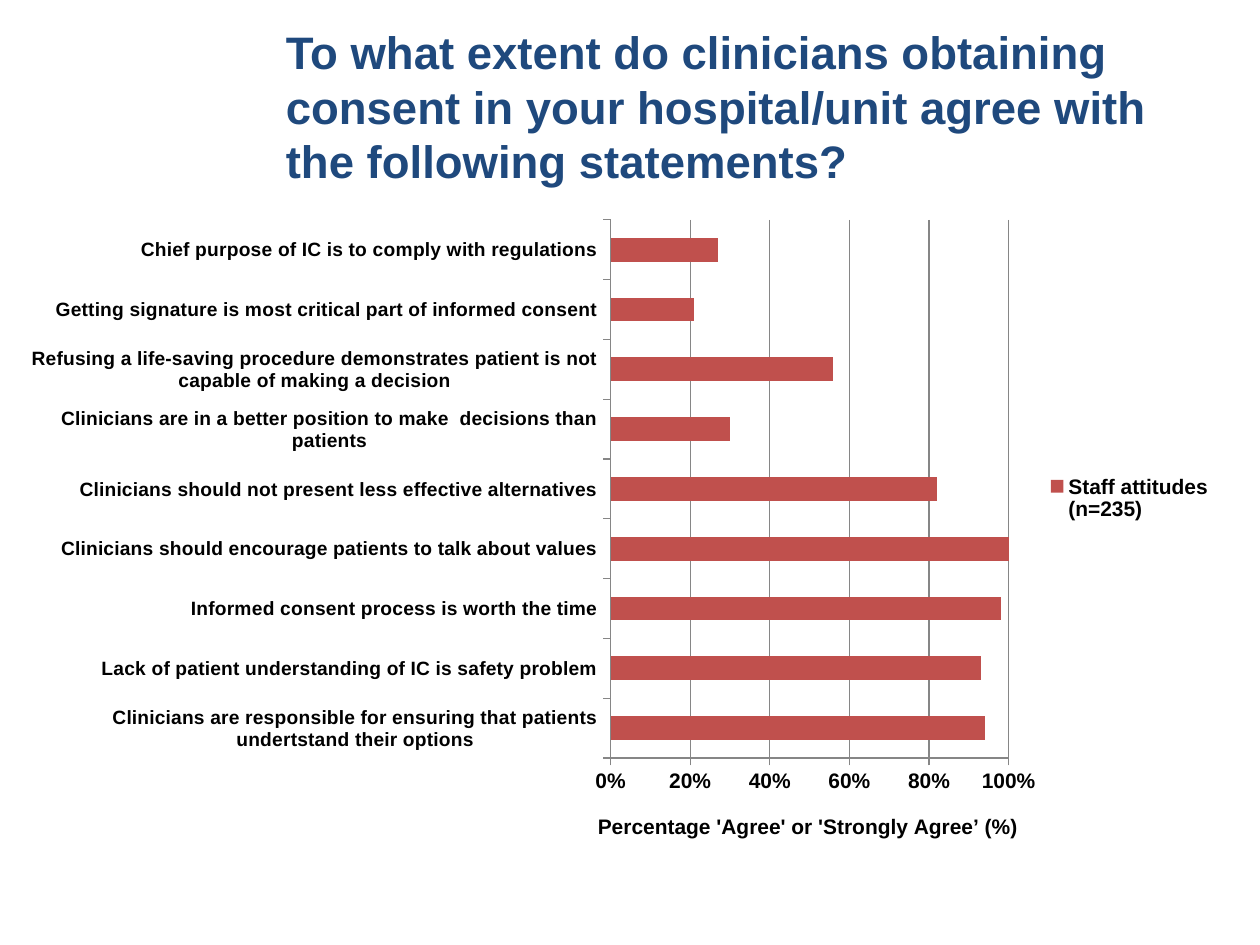
from lxml.etree import SubElement
from pptx import Presentation
from pptx.chart.data import CategoryChartData as ChartData
from pptx.dml.color import RGBColor as RGB
from pptx.enum.chart import XL_CHART_TYPE as Kind, XL_LEGEND_POSITION as Side
from pptx.enum.chart import XL_TICK_MARK as Tick
from pptx.enum.text import MSO_ANCHOR as Anchor
from pptx.oxml.ns import qn
from pptx.util import Inches, Pt

COLORS = {"title": "1F497D", "bar": "C0504D", "text": "000000", "line": "868686"}
ANSWERS = [
    ("Clinicians are responsible for ensuring that patients undertstand their options", 0.94),
    ("Lack of patient understanding of IC is safety problem", 0.93),
    ("Informed consent process is worth the time", 0.98),
    ("Clinicians should encourage patients to talk about values", 1),
    ("Clinicians should not present less effective alternatives", 0.82),
    ("Clinicians are in a better position to make  decisions than patients", 0.3),
    ("Refusing a life-saving procedure demonstrates patient is not capable of making a decision", 0.56),
    ("Getting signature is most critical part of informed consent", 0.21),
    ("Chief purpose of IC is to comply with regulations", 0.27),
]


def style(font, size, color="text"):
    """Apply the bold Arial look shared by all text."""
    for name, value in {"name": "Arial", "size": Pt(size), "bold": True}.items():
        setattr(font, name, value)
    font.color.rgb = RGB.from_string(COLORS[color])


def place(part, index, **values):
    """Fix a chart part's place, in fractions of the chart; index is the layout's slot."""
    for old in part.findall(qn("c:layout")):
        part.remove(old)
    layout = SubElement(part, qn("c:layout"))
    part.insert(index, layout)
    manual = SubElement(layout, qn("c:manualLayout"))
    for tag, value in values.items():
        SubElement(manual, qn(f"c:{tag}")).set("val", str(value))


deck = Presentation()
deck.slide_width, deck.slide_height = Inches(10), Inches(7.5)
slide = deck.slides.add_slide(deck.slide_layouts[6])

# Title
box = slide.shapes.add_textbox(Inches(2.17), Inches(0.5), Inches(7.5), Inches(0.68))
frame = box.text_frame
frame.word_wrap = True
frame.vertical_anchor = Anchor.MIDDLE
frame.text = ("To what extent do clinicians obtaining consent in your "
              "hospital/unit agree with the following statements?")
style(frame.paragraphs[0].font, 26, "title")

# Bar chart
data = ChartData(number_format="0%")
data.categories = [label for label, share in ANSWERS]
data.add_series("Staff attitudes (n=235)", [share for label, share in ANSWERS])
chart = slide.shapes.add_chart(
    Kind.BAR_CLUSTERED, Inches(0.25), Inches(1.58), Inches(9.42), Inches(5.16), data
).chart
style(chart.font, 10)
chart.has_title = False
plot = chart.plots[0]
plot.gap_width = 150
plot.vary_by_categories = False
fill = plot.series[0].format.fill
fill.solid()
fill.fore_color.rgb = RGB.from_string(COLORS["bar"])

# Axes
cats, vals = chart.category_axis, chart.value_axis
vals.has_major_gridlines = True
scale = {"minimum_scale": 0, "maximum_scale": 1, "major_unit": 0.2}
for name, value in scale.items():
    setattr(vals, name, value)
vals.tick_labels.number_format = "0%"
vals.tick_labels.number_format_is_linked = False
for axis, size in ((cats, 11), (vals, 12)):
    axis.major_tick_mark = Tick.OUTSIDE
    style(axis.tick_labels.font, size)
for part in (cats, vals, vals.major_gridlines):
    part.format.line.color.rgb = RGB.from_string(COLORS["line"])
    part.format.line.width = Pt(0.75)
title = vals.axis_title.text_frame
title.text = "Percentage 'Agree' or 'Strongly Agree’ (%)"
style(title.paragraphs[0].runs[0].font, 12)

# Legend
chart.has_legend = True
chart.legend.position = Side.RIGHT
chart.legend.include_in_layout = True
style(chart.legend.font, 12)

# Places of the plot, legend and axis title
edge = {"xMode": "edge", "yMode": "edge"}
place(chart._chartSpace.chart.plotArea, 0, layoutTarget="inner", **edge,
      x=0.487, y=0.032, w=0.336, h=0.828)
place(chart.legend._element, 1, **edge, x=0.85, y=0.42, w=0.15, h=0.08)
place(vals.axis_title._element, 1, **edge, x=0.473, y=0.94)

deck.save("out.pptx")
